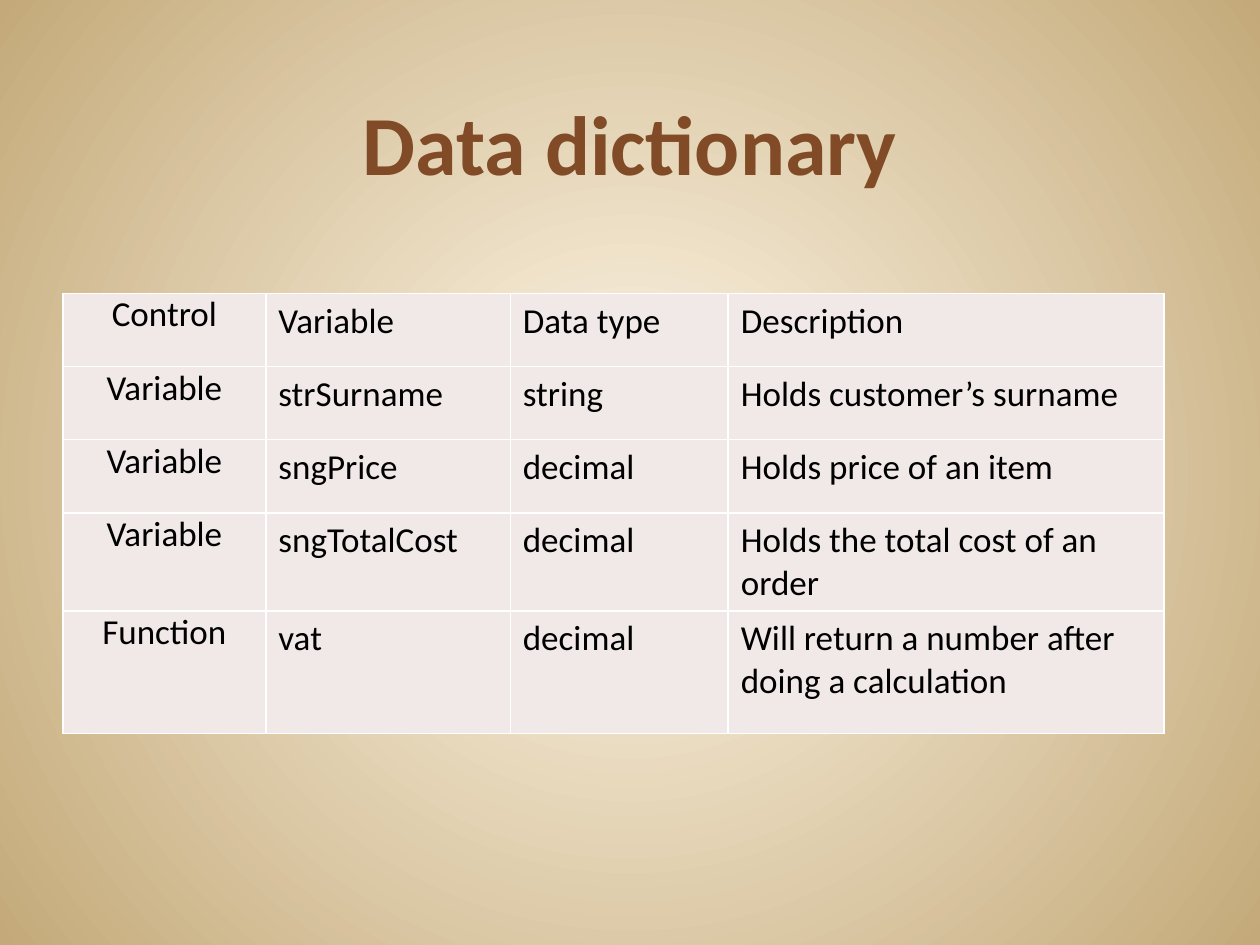
import dataclasses

import pptx
import pptx.dml.color
import pptx.enum.text
import pptx.oxml
import pptx.oxml.ns
import pptx.util
from pptx.util import Inches

ALIGN = pptx.enum.text.PP_ALIGN
ANCHOR = pptx.enum.text.MSO_ANCHOR
NAMESPACE = pptx.oxml.ns.nsdecls("a")


@dataclasses.dataclass(frozen=True)
class Theme:
    font: str = "Calibri"
    title_size: int = 48
    body_size: int = 20
    title_color: str = "804B26"
    text_color: str = "000000"
    cell_color: str = "F1E8E8"
    border_color: str = "FFFFFF"
    border_width: int = 1
    background_center: str = "FFF7E8"
    background_edge: str = "C4AA7A"


COLUMN_WIDTHS = [1.61, 1.94, 1.73, 3.46]
ROW_HEIGHTS = [0.58, 0.58, 0.58, 0.58, 0.97]
DICTIONARY_ROWS = [
    ["Control", "Variable", "Data type", "Description"],
    ["Variable", "strSurname", "string", "Holds customer’s surname"],
    ["Variable", "sngPrice", "decimal", "Holds price of an item"],
    ["Variable", "sngTotalCost", "decimal", "Holds the total cost of an order"],
    ["Function", "vat", "decimal", "Will return a number after doing a calculation"],
]


def rgb(color):
    return pptx.dml.color.RGBColor.from_string(color)


def write_text(text_frame, text, *, font, size, color, bold=False, align=ALIGN.LEFT):
    paragraph = text_frame.paragraphs[0]
    paragraph.alignment = align
    run = paragraph.add_run()
    run.text = text
    run.font.name = font
    run.font.size = pptx.util.Pt(size)
    run.font.bold = bold
    run.font.color.rgb = rgb(color)


class SlideBuilder:
    def __init__(self, slide, theme):
        self.slide = slide
        self.theme = theme

    def add_background(self):
        """Fill the background with a circular gradient from the slide centre."""
        fill = self.slide.background.fill
        fill.gradient()
        colors = (self.theme.background_center, self.theme.background_edge)
        for stop, color, position in zip(fill.gradient_stops, colors, (0, 1)):
            stop.color.rgb = rgb(color)
            stop.position = position
        linear = self.slide.element.find(".//" + pptx.oxml.ns.qn("a:lin"))
        circle = pptx.oxml.parse_xml(
            f'<a:path {NAMESPACE} path="circle">'
            '<a:fillToRect l="50000" t="50000" r="50000" b="50000"/></a:path>'
        )
        linear.getparent().replace(linear, circle)

    def add_title(self, text, left, top, width, height):
        title = self.slide.shapes.title
        title.left, title.top = Inches(left), Inches(top)
        title.width, title.height = Inches(width), Inches(height)
        title.text_frame.vertical_anchor = ANCHOR.BOTTOM
        write_text(title.text_frame, text, font=self.theme.font,
                   size=self.theme.title_size, color=self.theme.title_color,
                   bold=True, align=ALIGN.CENTER)

    def add_table(self, rows, left, top, column_widths, row_heights):
        frame = self.slide.shapes.add_table(
            len(rows), len(column_widths), Inches(left), Inches(top),
            Inches(sum(column_widths)), Inches(sum(row_heights)))
        table = frame.table
        table.first_row = table.horz_banding = False
        for column, width in zip(table.columns, column_widths):
            column.width = Inches(width)
        for row, height in zip(table.rows, row_heights):
            row.height = Inches(height)
        for row_index, texts in enumerate(rows):
            for column_index, text in enumerate(texts):
                self.format_cell(table.cell(row_index, column_index), text,
                                 is_label=column_index == 0)

    def format_cell(self, cell, text, is_label):
        """Style one cell; label cells are centred and have no margins."""
        if is_label:
            cell.margin_left = cell.margin_right = 0
            cell.margin_top = cell.margin_bottom = 0
        cell.vertical_anchor = ANCHOR.TOP
        cell.fill.solid()
        cell.fill.fore_color.rgb = rgb(self.theme.cell_color)
        write_text(cell.text_frame, text, font=self.theme.font,
                   size=self.theme.body_size, color=self.theme.text_color,
                   align=ALIGN.CENTER if is_label else ALIGN.LEFT)
        self.add_borders(cell)

    def add_borders(self, cell):
        properties = cell._tc.get_or_add_tcPr()
        width = pptx.util.Pt(self.theme.border_width)
        for index, side in enumerate("LRTB"):
            properties.insert(index, pptx.oxml.parse_xml(
                f'<a:ln{side} {NAMESPACE} w="{width}"><a:solidFill>'
                f'<a:srgbClr val="{self.theme.border_color}"/>'
                f'</a:solidFill></a:ln{side}>'))


def main():
    presentation = pptx.Presentation()
    presentation.slide_width = Inches(10)
    presentation.slide_height = Inches(7.5)
    title_only = presentation.slide_layouts[5]
    builder = SlideBuilder(presentation.slides.add_slide(title_only), Theme())
    builder.add_background()
    builder.add_title("Data dictionary", 0.5, 0.33, 9, 1.25)
    builder.add_table(DICTIONARY_ROWS, 0.5, 2.33, COLUMN_WIDTHS, ROW_HEIGHTS)
    presentation.save("out.pptx")


if __name__ == "__main__":
    main()
